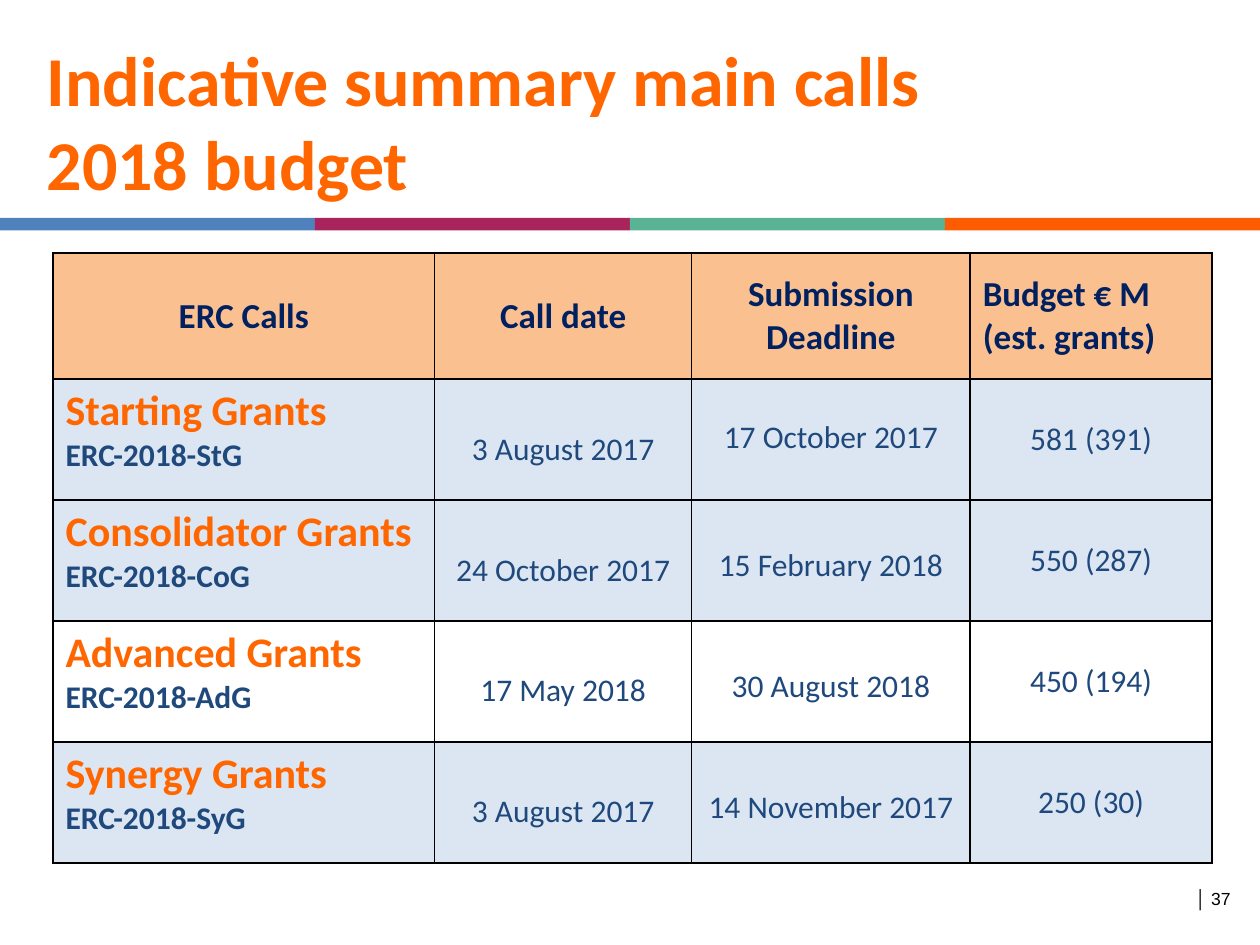
from pptx import Presentation
from pptx.dml.color import RGBColor
from pptx.enum.shapes import MSO_SHAPE
from pptx.enum.text import MSO_ANCHOR, MSO_AUTO_SIZE, PP_ALIGN
from pptx.oxml import parse_xml
from pptx.oxml.ns import nsdecls
from pptx.util import Inches, Pt

RECT = MSO_SHAPE.RECTANGLE
TOP, MIDDLE = MSO_ANCHOR.TOP, MSO_ANCHOR.MIDDLE
LEFT, CENTER = PP_ALIGN.LEFT, PP_ALIGN.CENTER
NO_FIT = MSO_AUTO_SIZE.NONE

COLORS = {
    "orange": "FF6600", "navy": "002060", "blue": "1F497D", "black": "000000",
    "header": "FAC090", "row": "DCE6F2",
}
BAND = ["4F81BD", "A9245D", "5AB395", "FD5C03"]
COL_WIDTHS = [3.03, 2.04, 2.21, 1.92]
ROW_HEIGHTS = [1, 0.96, 0.96, 0.96, 0.96]
HEADERS = ["ERC Calls", "Call date", "Submission Deadline", "Budget € M\v(est. grants)"]
CALLS = [
    ("Starting Grants", "ERC-2018-StG", "3 August 2017", "17 October 2017", "581 (391)"),
    ("Consolidator Grants", "ERC-2018-CoG", "24 October 2017", "15 February 2018", "550 (287)"),
    ("Advanced Grants", "ERC-2018-AdG", "17 May 2018", "30 August 2018", "450 (194)"),
    ("Synergy Grants", "ERC-2018-SyG", "3 August 2017", "14 November 2017", "250 (30)"),
]


def rgb(name):
    return RGBColor.from_string(COLORS[name])


def write(p, text, size=18, color="blue", bold=False, font="Calibri",
          align=LEFT, spacing=None):
    p.text = text
    p.alignment = align
    p.line_spacing = spacing
    for r in p.runs:
        r.font.name = font
        r.font.size = Pt(size)
        r.font.bold = bold
        r.font.color.rgb = rgb(color)


def add_title(slide, text):
    sp = slide.shapes.title
    sp.left, sp.top, sp.width, sp.height = map(Inches, (0.27, 0.35, 8.16, 1.21))
    tf = sp.text_frame
    tf.auto_size = NO_FIT
    tf.vertical_anchor = MIDDLE
    write(tf.paragraphs[0], text, size=40, color="orange", bold=True)


def add_band(slide):
    width = 10 / len(BAND)
    for i, color in enumerate(BAND):
        sp = slide.shapes.add_shape(RECT, Inches(i * width), Inches(1.73),
                                    Inches(width), Inches(0.1))
        sp.shadow.inherit = False
        sp.fill.solid()
        sp.fill.fore_color.rgb = RGBColor.from_string(color)
        sp.line.fill.background()


def add_page_number(slide, text):
    sp = slide.shapes.add_textbox(Inches(9.39), Inches(7), Inches(0.67), Inches(0.6))
    tf = sp.text_frame
    tf.word_wrap = True
    write(tf.paragraphs[0], text, size=10, color="black", font="Arial")


def style_cell(cell, fill, anchor=MIDDLE):
    cell.vertical_anchor = anchor
    tc_pr = cell._tc.get_or_add_tcPr()
    for side in ("lnL", "lnR", "lnT", "lnB"):
        tc_pr.append(parse_xml(
            f'<a:{side} {nsdecls("a")} w="{Pt(1)}"><a:solidFill>'
            f'<a:srgbClr val="{COLORS["black"]}"/></a:solidFill></a:{side}>'))
    if fill:
        cell.fill.solid()
        cell.fill.fore_color.rgb = rgb(fill)
    else:
        cell.fill.background()


def add_call_row(table, row, call):
    name, code, opened, deadline, budget = call
    fill = None if name == "Advanced Grants" else "row"
    cells = [table.cell(row, col) for col in range(len(COL_WIDTHS))]
    for cell, anchor in zip(cells, (TOP, MIDDLE, MIDDLE, MIDDLE)):
        style_cell(cell, fill, anchor)
    tf = cells[0].text_frame
    write(tf.paragraphs[0], name, size=24, color="orange", bold=True)
    write(tf.add_paragraph(), code, bold=True)
    if row > 1:
        cells[2].margin_top = Inches(0.16)
    for cell, text, spacing in zip(cells[1:], (opened, deadline, budget), (1.5, 0.8, None)):
        write(cell.text_frame.paragraphs[0], text, align=CENTER, spacing=spacing)


def add_calls_table(slide):
    frame = slide.shapes.add_table(len(ROW_HEIGHTS), len(COL_WIDTHS), Inches(0.42), Inches(2.01),
                                   Inches(sum(COL_WIDTHS)), Inches(sum(ROW_HEIGHTS)))
    table = frame.table
    table.first_row = table.horz_banding = False
    for col, width in zip(table.columns, COL_WIDTHS):
        col.width = Inches(width)
    for row, height in zip(table.rows, ROW_HEIGHTS):
        row.height = Inches(height)
    for i, text in enumerate(HEADERS):
        cell = table.cell(0, i)
        style_cell(cell, "header")
        write(cell.text_frame.paragraphs[0], text, size=20, color="navy", bold=True,
              align=LEFT if i == len(HEADERS) - 1 else CENTER)
    for row, call in enumerate(CALLS, 1):
        add_call_row(table, row, call)


def main():
    prs = Presentation()
    prs.slide_width, prs.slide_height = Inches(10), Inches(7.5)
    slide = prs.slides.add_slide(prs.slide_layouts[5])
    add_band(slide)
    add_title(slide, "Indicative summary main calls\v2018 budget")
    add_page_number(slide, "│ 37")
    add_calls_table(slide)
    prs.save("out.pptx")


if __name__ == "__main__":
    main()
